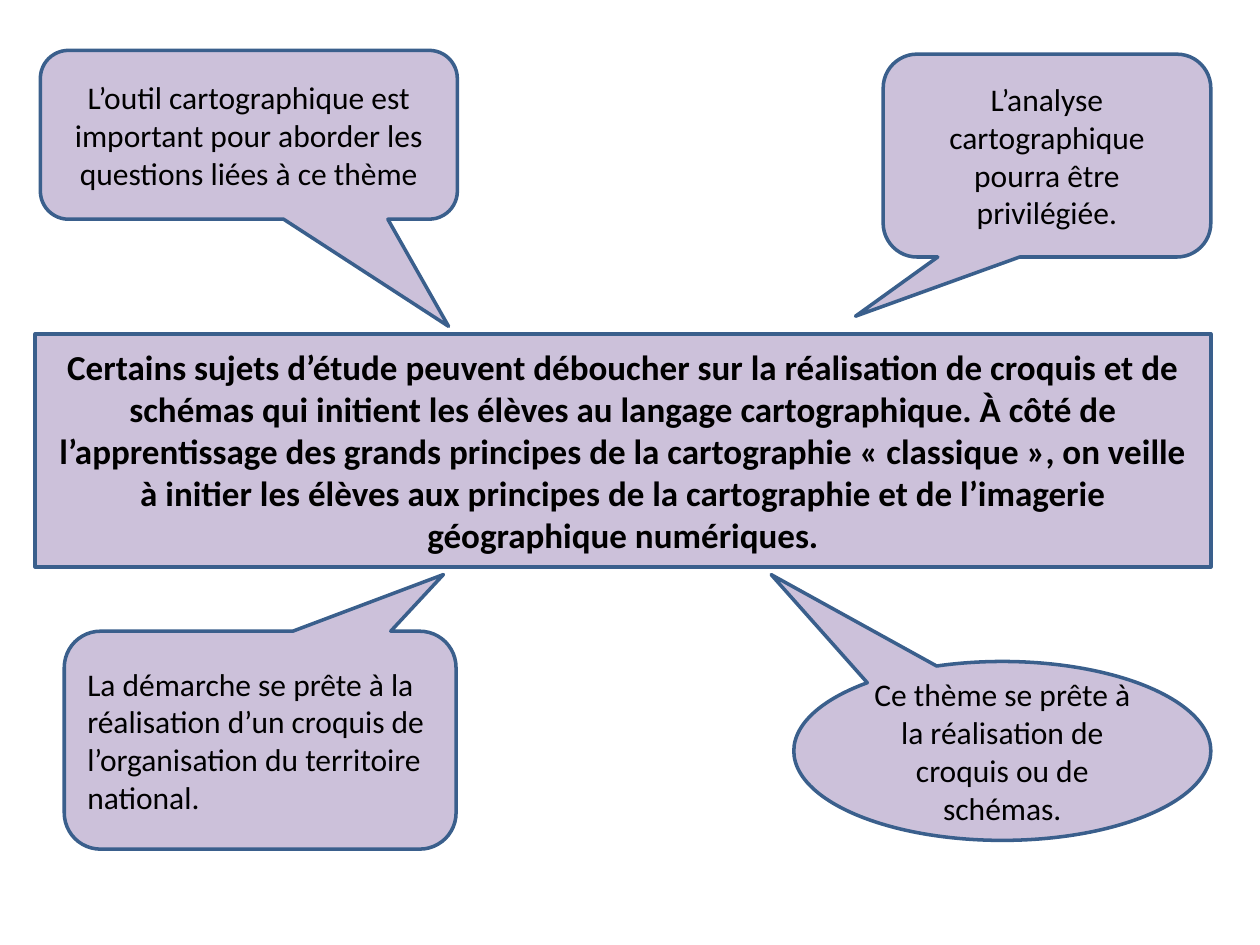
from dataclasses import dataclass

from pptx import Presentation
from pptx.dml.color import RGBColor
from pptx.enum.shapes import MSO_SHAPE as Shape
from pptx.enum.text import MSO_ANCHOR as Anchor, PP_ALIGN as Align
from pptx.util import Inches, Pt

COLUMNS, ROWS = 100, 75  # grid laid over the slide


@dataclass(frozen=True)
class Theme:
    font: str = "Calibri"
    fill: RGBColor = RGBColor(0xCC, 0xC1, 0xDA)
    outline: RGBColor = RGBColor(0x3A, 0x5F, 0x8C)
    ink: RGBColor = RGBColor(0, 0, 0)
    outline_width: float = 2
    remark_size: int = 18
    statement_size: int = 20


class SlideBuilder:
    def __init__(self, deck, theme):
        self.theme = theme
        self.slide = deck.slides.add_slide(deck.slide_layouts[6])
        self.column = deck.slide_width / COLUMNS
        self.row = deck.slide_height / ROWS

    def panel(self, kind, box, text, size, bold=False, align=Align.CENTER):
        """Filled, outlined shape; box is left, top, width, height in grid units."""
        left, top, width, height = box
        panel = self.slide.shapes.add_shape(
            kind, round(left * self.column), round(top * self.row),
            round(width * self.column), round(height * self.row))
        panel.shadow.inherit = False
        panel.fill.solid()
        panel.fill.fore_color.rgb = self.theme.fill
        panel.line.color.rgb = self.theme.outline
        panel.line.width = Pt(self.theme.outline_width)

        frame = panel.text_frame
        frame.text = text
        frame.word_wrap = True
        frame.vertical_anchor = Anchor.MIDDLE
        paragraph = frame.paragraphs[0]
        paragraph.alignment = align
        font = paragraph.runs[0].font
        font.name, font.size, font.bold = self.theme.font, Pt(size), bold
        font.color.rgb = self.theme.ink
        return panel

    def statement(self, box, text):
        self.panel(Shape.RECTANGLE, box, text, self.theme.statement_size, bold=True)

    def callout(self, box, tip, text, kind=Shape.ROUNDED_RECTANGULAR_CALLOUT,
                align=Align.CENTER):
        """Speech bubble whose tail ends at tip, given in grid units."""
        bubble = self.panel(kind, box, text, self.theme.remark_size, align=align)
        left, top, width, height = box
        # The tail is measured from the bubble's centre, as a share of its size
        bubble.adjustments[0] = (tip[0] - left) / width - 0.5
        bubble.adjustments[1] = (tip[1] - top) / height - 0.5


def main():
    deck = Presentation()
    deck.slide_width, deck.slide_height = Inches(10), Inches(7.5)
    page = SlideBuilder(deck, Theme())

    # Remarks below the statement
    page.callout((63, 52.5, 33.1, 14.2), (61.2, 45.6),
                 "Ce thème se prête à la réalisation de croquis ou de schémas.",
                 kind=Shape.OVAL_CALLOUT)
    page.callout((5.1, 50.1, 31.1, 17.3), (35.2, 45.6),
                 "La démarche se prête à la réalisation d’un croquis de "
                 "l’organisation du territoire national.", align=Align.LEFT)

    # Remarks above the statement
    page.callout((70.1, 4.3, 26, 16.1), (67.9, 25.1),
                 "L’analyse cartographique pourra être privilégiée.")
    page.callout((3.2, 4, 33.1, 13.4), (35.6, 25.9),
                 "L’outil cartographique est important pour aborder les "
                 "questions liées à ce thème")

    # Central statement
    page.statement((2.8, 26.5, 93.3, 18.5),
                   "Certains sujets d’étude peuvent déboucher sur la réalisation "
                   "de croquis et de schémas qui initient les élèves au langage "
                   "cartographique. À côté de l’apprentissage des grands principes "
                   "de la cartographie « classique », on veille à initier les "
                   "élèves aux principes de la cartographie et de l’imagerie "
                   "géographique numériques.")

    deck.save("out.pptx")


if __name__ == "__main__":
    main()
